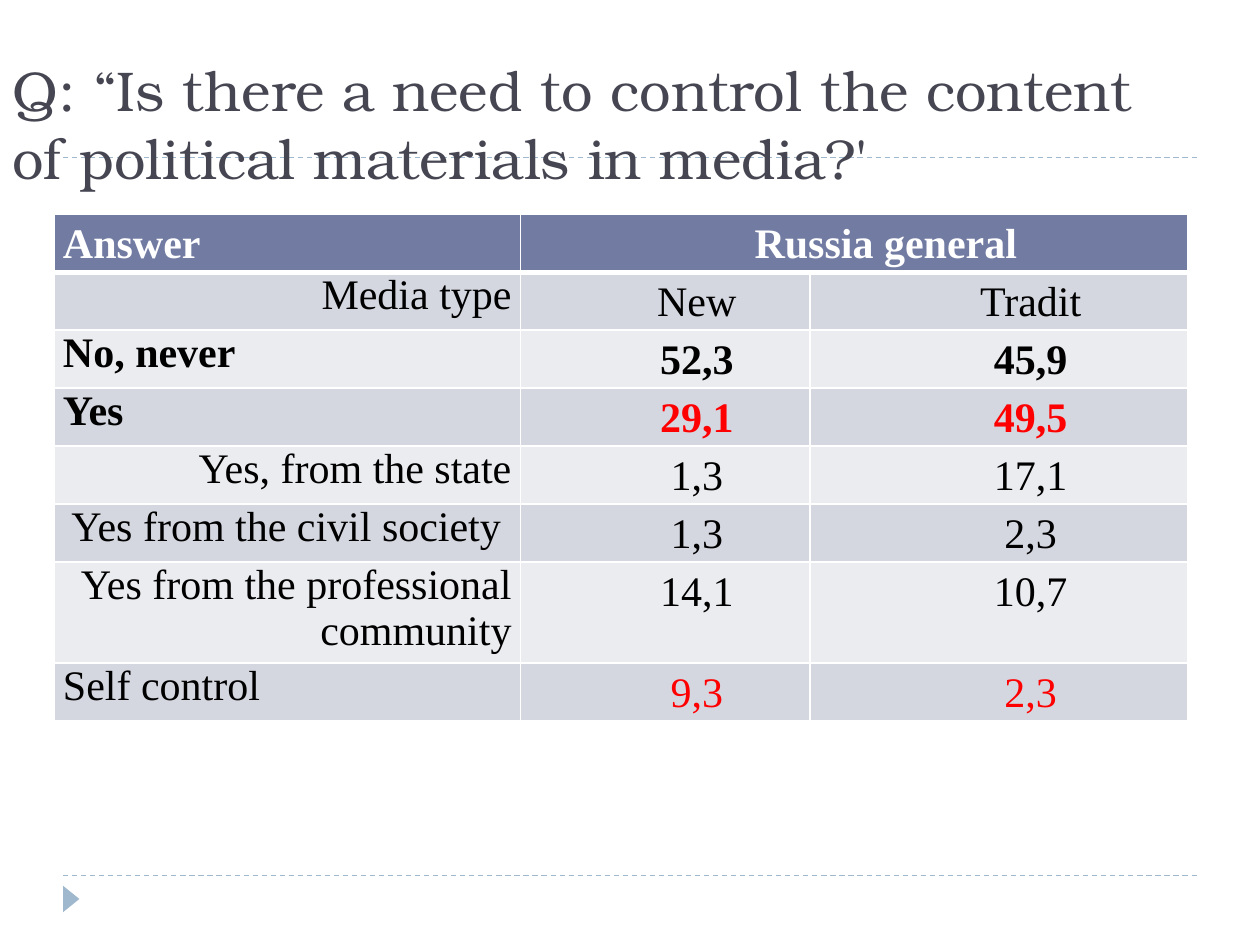
from dataclasses import dataclass

from lxml.etree import SubElement
from pptx import Presentation
from pptx.dml.color import RGBColor as RGB
from pptx.enum.dml import MSO_LINE
from pptx.enum.shapes import MSO_CONNECTOR, MSO_SHAPE
from pptx.enum.text import MSO_ANCHOR, PP_ALIGN as AL
from pptx.oxml.ns import qn
from pptx.util import Inches, Pt


@dataclass(frozen=True)
class Theme:
    accent: str = "9FB8CD"
    title: str = "464653"
    header: str = "727CA3"
    bands: tuple = ("D5D7E0", "EBECF0")
    text: str = "000000"
    light: str = "FFFFFF"
    alert: str = "FF0000"
    title_font: str = "TeX Gyre Bonum"
    table_font: str = "Times New Roman"
    title_size: int = 32
    table_size: int = 24


TH = Theme()
SIZE = (10, 7.5)
COL_SHARES = (3.7 / 9, 2.3 / 9, 3 / 9)
HEADER = ("Answer", "Russia general", "")
# answer, new media, traditional media, answer alignment, bold, red values
ROWS = [
    ("Media type", "New", "Tradit", AL.RIGHT, False, False),
    ("No, never", "52,3", "45,9", AL.JUSTIFY, True, False),
    ("Yes", "29,1", "49,5", AL.JUSTIFY, True, True),
    ("Yes, from the state", "1,3", "17,1", AL.RIGHT, False, False),
    ("Yes from the civil society ", "1,3", "2,3", AL.RIGHT, False, False),
    ("Yes from the professional community", "14,1", "10,7", AL.RIGHT, False, False),
    ("Self control ", "9,3", "2,3", AL.JUSTIFY, False, True),
]


def set_font(p, name, size, color, bold=False):
    f = p.font
    f.name, f.size, f.bold = name, Pt(size), bold
    f.color.rgb = RGB.from_string(color)


def add_rule(s, x, y, w):
    line = s.shapes.add_connector(
        MSO_CONNECTOR.STRAIGHT, Inches(x), Inches(y), Inches(x + w), Inches(y))
    line.line.color.rgb = RGB.from_string(TH.accent)
    line.line.width = Pt(0.75)
    line.line.dash_style = MSO_LINE.DASH
    SubElement(line._element.spPr, qn("a:effectLst"))


def add_frame(s, x, y, w, h):
    """Dashed rules at the top and bottom of the box, with a marker below."""
    add_rule(s, x, y + h, w)
    add_rule(s, x, y, w)
    base, height = 0.21, 0.13
    sp = s.shapes.add_shape(
        MSO_SHAPE.ISOSCELES_TRIANGLE, Inches(x - (base - height) / 2),
        Inches(y + h + 0.12), Inches(base), Inches(height))
    sp.rotation = 90
    sp.shadow.inherit = False
    sp.fill.solid()
    sp.fill.fore_color.rgb = RGB.from_string(TH.accent)
    sp.line.fill.background()


def add_title(s, x, y, w, h, text):
    tf = s.shapes.add_textbox(Inches(x), Inches(y), Inches(w), Inches(h)).text_frame
    tf.word_wrap = True
    tf.vertical_anchor = MSO_ANCHOR.BOTTOM
    p = tf.paragraphs[0]
    p.text = text
    set_font(p, TH.title_font, TH.title_size, TH.title)


def set_borders(cell, bottom):
    tc_pr = cell._tc.get_or_add_tcPr()
    for side, width in (("L", 1), ("R", 1), ("T", 1), ("B", bottom)):
        ln = SubElement(tc_pr, qn(f"a:ln{side}"), w=str(Pt(width)))
        fill = SubElement(ln, qn("a:solidFill"))
        SubElement(fill, qn("a:srgbClr"), val=TH.light)


def fill_cell(cell, text, fill, color, bold, align, spacing=None, indent=0, bottom=1):
    cell.margin_left = cell.margin_right = Inches(0.07)
    cell.margin_top = cell.margin_bottom = 0
    set_borders(cell, bottom)
    cell.fill.solid()
    cell.fill.fore_color.rgb = RGB.from_string(fill)
    p = cell.text_frame.paragraphs[0]
    p.text = text
    p.alignment = align
    p.line_spacing = spacing
    if indent:
        p._p.get_or_add_pPr().set("marL", str(Inches(indent)))
    set_font(p, TH.table_font, TH.table_size, color, bold)


def add_answers(s, x, y, w, row_h):
    n = len(ROWS) + 1
    table = s.shapes.add_table(
        n, 3, Inches(x), Inches(y), Inches(w), Inches(n * row_h)).table
    for col, share in zip(table.columns, COL_SHARES):
        col.width = Inches(w * share)
    for row in table.rows:
        row.height = Inches(row_h)
    for c, text in enumerate(HEADER):
        fill_cell(table.cell(0, c), text, TH.header, TH.light, True,
                  AL.CENTER if c else AL.LEFT, 1.15, 0.5 if c else 0, 3)
    table.cell(0, 1).merge(table.cell(0, 2))
    for r, (answer, new, tradit, align, bold, red) in enumerate(ROWS, 1):
        band = TH.bands[(r - 1) % 2]
        fill_cell(table.cell(r, 0), answer, band, TH.text, bold, align)
        for c, value in enumerate((new, tradit), 1):
            fill_cell(table.cell(r, c), value, band, TH.alert if red else TH.text,
                      bold, AL.CENTER, 1.15, 0.5)


def main():
    prs = Presentation()
    prs.slide_width, prs.slide_height = map(Inches, SIZE)
    s = prs.slides.add_slide(prs.slide_layouts[6])
    w, h = SIZE
    add_frame(s, 0.05 * w, h / 6, 0.9 * w, 0.76 * h)
    add_title(s, 0, 0.29, 0.95 * w, 1.27,
              "Q: “Is there a need to control the content of political materials in media?'")
    add_answers(s, 0.43, 1.7, 0.9 * w, 0.41)
    prs.save("out.pptx")


if __name__ == "__main__":
    main()
